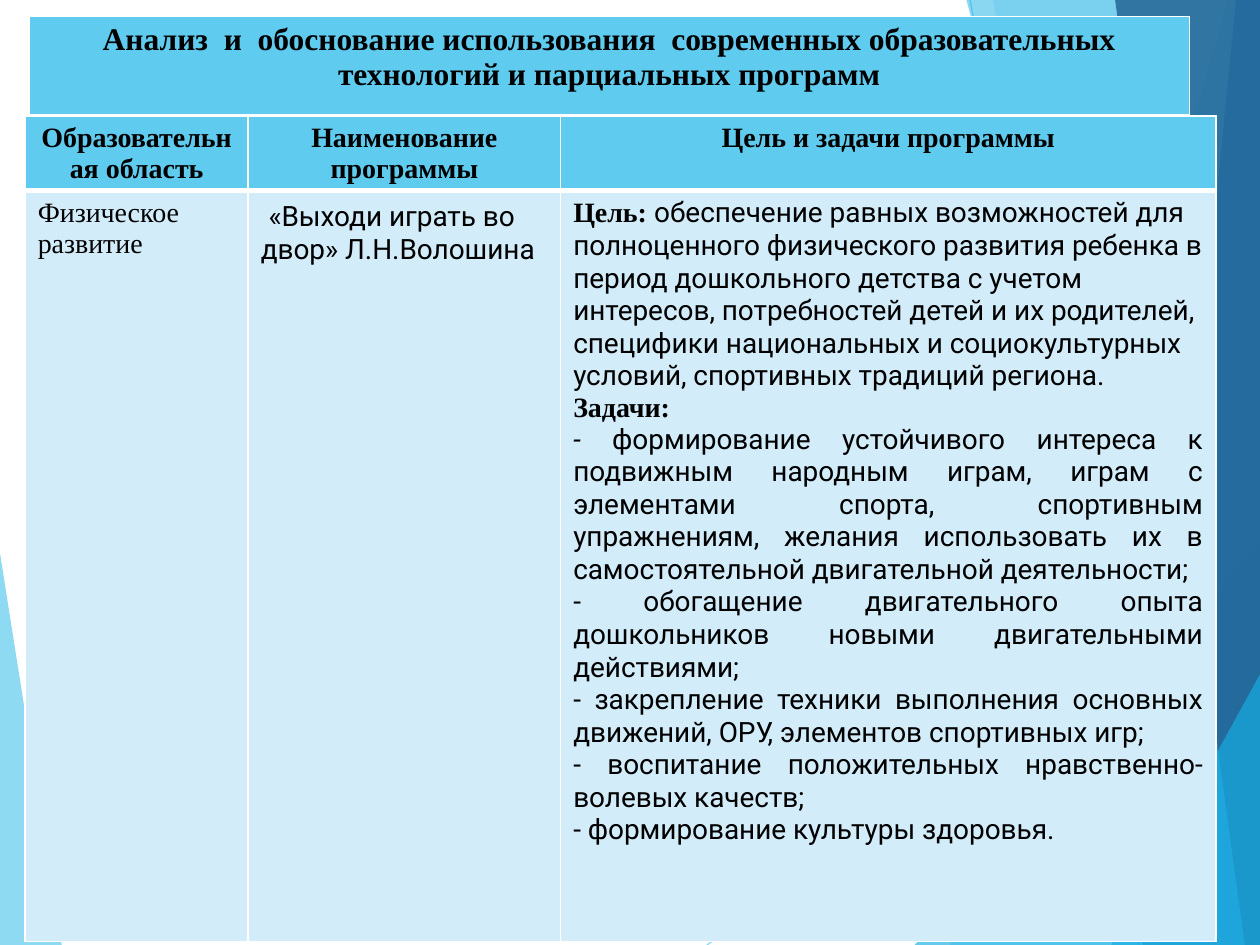
from dataclasses import dataclass

from lxml import etree
from pptx import Presentation
from pptx.dml.color import RGBColor
from pptx.enum.shapes import MSO_CONNECTOR
from pptx.enum.text import PP_ALIGN
from pptx.oxml.ns import qn
from pptx.util import Inches, Pt

STRAIGHT = MSO_CONNECTOR.STRAIGHT
LEFT, CENTER, JUSTIFY = PP_ALIGN.LEFT, PP_ALIGN.CENTER, PP_ALIGN.JUSTIFY

COLORS = {
    "sky": "5FCBEF",
    "azure": "17B0E4",
    "blue": "2E83C3",
    "navy": "226292",
    "pale": "D2ECF9",
    "white": "FFFFFF",
    "black": "000000",
}
SERIF, SANS = "Times New Roman", "Roboto"
WIDTH, HEIGHT = 10, 7.5


@dataclass
class Facet:
    points: list[tuple[float, float]]
    color: str
    opacity: int


@dataclass
class Ray:
    start: tuple[float, float]
    end: tuple[float, float]


@dataclass
class Span:
    text: str
    font: str = SANS
    bold: bool = False
    italic: bool = False
    size: float | None = None


@dataclass
class Para:
    spans: list[Span]
    align: PP_ALIGN = LEFT
    size: float = 16


@dataclass
class Cell:
    paras: list[Para]
    color: str
    top: float = 1
    bottom: float = 1


@dataclass
class Grid:
    left: float
    top: float
    columns: list[float]
    rows: list[float]
    cells: list[list[Cell]]


def right_facet(top_x: float, bottom_x: float, color: str, opacity: int) -> Facet:
    """Full-height facet between a slanted edge and the right side of the page."""
    points = [(top_x, 0), (bottom_x, HEIGHT), (WIDTH, HEIGHT), (WIDTH, 0)]
    return Facet(points, color, opacity)


def corner_facet(bottom_x: float, right_y: float) -> Facet:
    """Triangle in the bottom right corner."""
    points = [(bottom_x, HEIGHT), (WIDTH, right_y), (WIDTH, HEIGHT)]
    return Facet(points, "azure", 66)


def heading(text: str, size: float = 16) -> Cell:
    para = Para([Span(text, SERIF, bold=True)], CENTER, size)
    return Cell([para], "sky", bottom=3)


def body(*paras: Para) -> Cell:
    return Cell(list(paras), "pale", top=3)


def task(text: str, italic_dash: bool = False) -> Para:
    return Para([Span("- ", italic=italic_dash), Span(text)], JUSTIFY)


BACKDROP = [
    Facet([(0, 4.39), (0.49, HEIGHT), (0, HEIGHT)], "sky", 70),
    Ray((5.61, HEIGHT), (WIDTH, 4.57)),
    Ray((7.7, 0), (9.04, HEIGHT)),
    right_facet(9.75, 7.54, "sky", 36),
    right_facet(7.88, 9.19, "sky", 20),
    corner_facet(7.26, 4.29),
    right_facet(7.67, 9.7, "azure", 50),
    right_facet(9.81, 9.07, "blue", 70),
    right_facet(8.85, 9.88, "navy", 82),
    corner_facet(8.82, 5.35),
]

TITLE = Grid(0.23, 0.13, [9.21], [0.79], [[heading(
    "Анализ  и  обоснование использования  современных образовательных "
    "технологий и парциальных программ", 18)]])

PROGRAM = Grid(0.2, 0.92, [1.77, 2.48, 5.2], [0.49, 5.96], [
    [heading("Образовательная область"),
     heading("Наименование программы"),
     heading("Цель и задачи программы")],
    [body(Para([Span("Физическое развитие", SERIF)])),
     body(Para([Span(" ", italic=True, size=18),
                Span("«Выходи играть во двор» Л.Н.Волошина")])),
     body(
         Para([Span("Цель: ", SERIF, bold=True),
               Span("обеспечение равных возможностей для полноценного "
                    "физического развития ребенка в период дошкольного детства "
                    "с учетом интересов, потребностей детей и их родителей, "
                    "специфики национальных и социокультурных условий, "
                    "спортивных традиций региона.")]),
         Para([Span("Задачи:", SERIF, bold=True)]),
         task("формирование устойчивого интереса к подвижным народным играм, "
              "играм с элементами спорта, спортивным упражнениям, желания "
              "использовать их в самостоятельной двигательной деятельности;",
              italic_dash=True),
         task("обогащение двигательного опыта дошкольников новыми "
              "двигательными действиями;"),
         task("закрепление техники выполнения основных движений, ОРУ, "
              "элементов спортивных игр;"),
         task("воспитание положительных нравственно-волевых качеств;"),
         task("формирование культуры здоровья."))],
])


def rgb(color: str) -> RGBColor:
    return RGBColor.from_string(COLORS[color])


def set_opacity(shape, percent: int) -> None:
    for color in shape._element.spPr.iter(qn("a:srgbClr")):
        etree.SubElement(color, qn("a:alpha"), val=str(percent * 1000))


def draw_facet(page, facet: Facet) -> None:
    points = [(Inches(x), Inches(y)) for x, y in facet.points]
    builder = page.shapes.build_freeform(*points[0])
    builder.add_line_segments(points[1:], close=True)
    shape = builder.convert_to_shape()
    shape.shadow.inherit = False
    shape.fill.solid()
    shape.fill.fore_color.rgb = rgb(facet.color)
    shape.line.fill.background()
    set_opacity(shape, facet.opacity)


def draw_ray(page, ray: Ray) -> None:
    ends = [Inches(value) for value in (*ray.start, *ray.end)]
    line = page.shapes.add_connector(STRAIGHT, *ends)
    line.line.color.rgb = rgb("sky")
    line.line.width = Pt(0.75)
    set_opacity(line, 70)
    etree.SubElement(line._element.spPr, qn("a:effectLst"))


def set_borders(cell, top: float, bottom: float) -> None:
    properties = cell._tc.get_or_add_tcPr()
    for side, width in (("L", 1), ("R", 1), ("T", top), ("B", bottom)):
        border = etree.SubElement(properties, qn(f"a:ln{side}"), w=str(Pt(width)))
        fill = etree.SubElement(border, qn("a:solidFill"))
        etree.SubElement(fill, qn("a:srgbClr"), val=COLORS["white"])


def write_para(paragraph, para: Para) -> None:
    paragraph.alignment = para.align
    paragraph.font.size = Pt(para.size)
    paragraph.font.color.rgb = rgb("black")
    for span in para.spans:
        run = paragraph.add_run()
        run.text = span.text
        run.font.name = span.font
        run.font.bold = span.bold
        run.font.italic = span.italic
        if span.size:
            run.font.size = Pt(span.size)


def fill_cell(target, cell: Cell) -> None:
    set_borders(target, cell.top, cell.bottom)
    target.fill.solid()
    target.fill.fore_color.rgb = rgb(cell.color)
    frame = target.text_frame
    for index, para in enumerate(cell.paras):
        write_para(frame.add_paragraph() if index else frame.paragraphs[0], para)


def draw_grid(page, grid: Grid) -> None:
    size = (sum(grid.columns), sum(grid.rows))
    box = [Inches(value) for value in (grid.left, grid.top, *size)]
    table = page.shapes.add_table(len(grid.rows), len(grid.columns), *box).table
    for column, width in zip(table.columns, grid.columns):
        column.width = Inches(width)
    for row, height, cells in zip(table.rows, grid.rows, grid.cells):
        row.height = Inches(height)
        for target, cell in zip(row.cells, cells):
            fill_cell(target, cell)


def main() -> None:
    deck = Presentation()
    deck.slide_width, deck.slide_height = Inches(WIDTH), Inches(HEIGHT)
    page = deck.slides.add_slide(deck.slide_layouts[6])
    for item in BACKDROP:
        if isinstance(item, Facet):
            draw_facet(page, item)
        else:
            draw_ray(page, item)
    for grid in (TITLE, PROGRAM):
        draw_grid(page, grid)
    deck.save("out.pptx")


if __name__ == "__main__":
    main()
